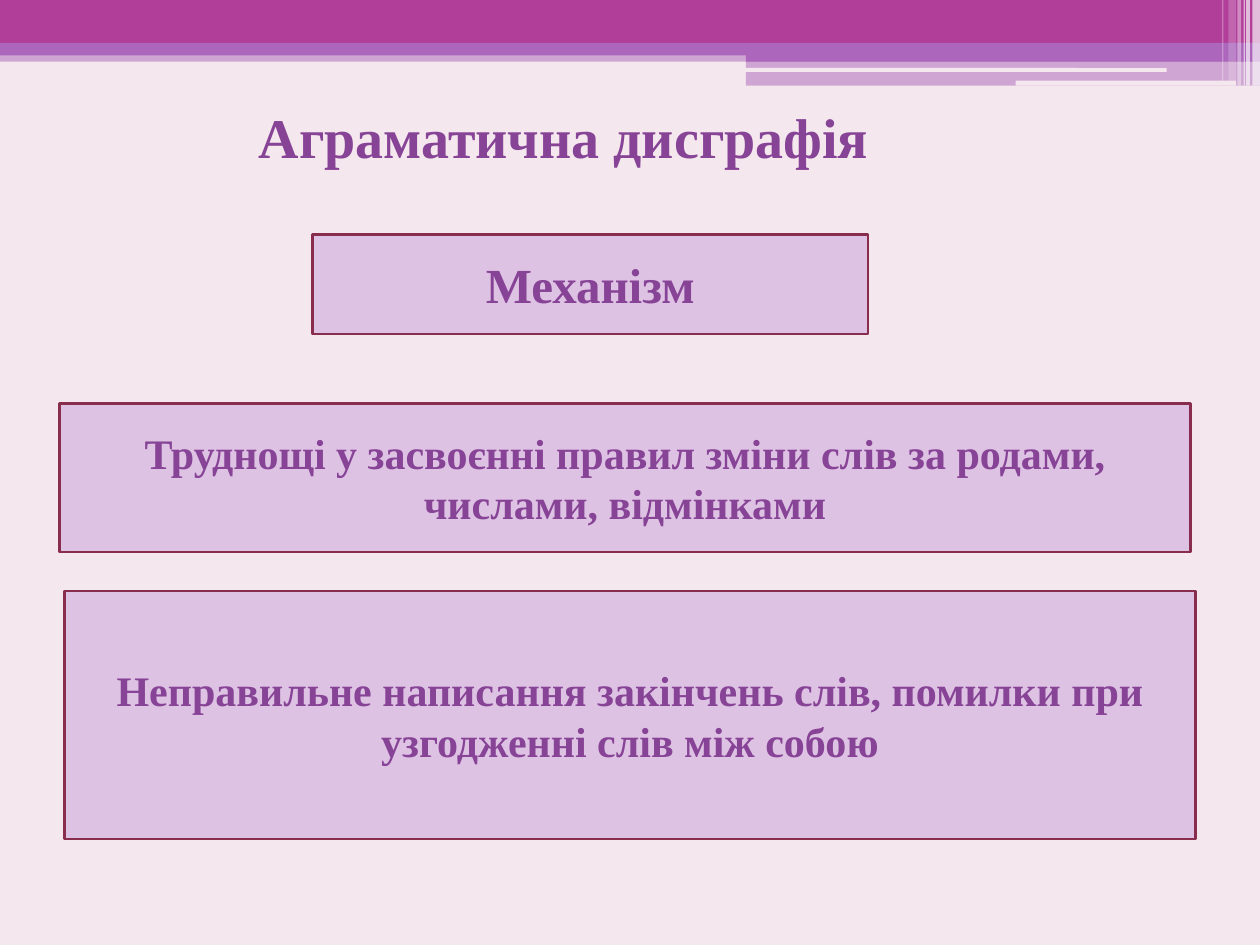
import pptx
import pptx.util
import pptx.dml.color
import pptx.enum.shapes
import pptx.enum.text
import pptx.oxml.ns
from lxml import etree

Inches = pptx.util.Inches
RGBColor = pptx.dml.color.RGBColor
Kind = pptx.enum.shapes.MSO_SHAPE
Anchor = pptx.enum.text.MSO_ANCHOR

PAPER = RGBColor(0xF4, 0xE7, 0xED)
PINK = RGBColor(0xB1, 0x3F, 0x9A)
VIOLET = RGBColor(0xAC, 0x66, 0xBB)
WHITE = RGBColor(0xFF, 0xFF, 0xFF)
LILAC = RGBColor(0xDE, 0xC2, 0xE4)
WINE = RGBColor(0x88, 0x2D, 0x4D)
INK = RGBColor(0x87, 0x43, 0x96)


class Page:
    font = "Times New Roman"

    def __init__(self, deck):
        self.slide = deck.slides.add_slide(deck.slide_layouts[5])
        fill = self.slide.background.fill
        fill.solid()
        fill.fore_color.rgb = PAPER

    def label(self, shape, text, size, anchor):
        frame = shape.text_frame
        frame.text = text
        frame.word_wrap = True
        frame.vertical_anchor = anchor
        para = frame.paragraphs[0]
        para.alignment = pptx.enum.text.PP_ALIGN.CENTER
        font = para.runs[0].font
        font.name, font.size, font.bold = self.font, pptx.util.Pt(size), True
        font.color.rgb = INK

    def title(self, text, x, y, w, h):
        shape = self.slide.shapes.title
        shape.left, shape.top = Inches(x), Inches(y)
        shape.width, shape.height = Inches(w), Inches(h)
        self.label(shape, text, 32, Anchor.TOP)
        shape.text_frame.auto_size = pptx.enum.text.MSO_AUTO_SIZE.SHAPE_TO_FIT_TEXT

    def band(self, x, y, w, h, color, alpha=100, kind=Kind.RECTANGLE):
        shape = self.slide.shapes.add_shape(
            kind, Inches(x), Inches(y), Inches(w), Inches(h))
        shape.shadow.inherit = False
        shape.fill.solid()
        shape.fill.fore_color.rgb = color
        shape.line.fill.background()
        if alpha < 100:
            tint = shape.element.spPr.find(".//" + pptx.oxml.ns.qn("a:srgbClr"))
            etree.SubElement(tint, pptx.oxml.ns.qn("a:alpha"), val=str(alpha * 1000))
        return shape

    def box(self, text, size, x, y, w, h):
        shape = self.band(x, y, w, h, LILAC)
        shape.line.color.rgb = WINE
        shape.line.width = pptx.util.Pt(1.5)
        self.label(shape, text, size, Anchor.MIDDLE)


def main():
    deck = pptx.Presentation()
    deck.slide_width, deck.slide_height = Inches(10), Inches(7.5)
    page = Page(deck)

    # Header bands
    page.band(0, 0.4, 10, 0.09, VIOLET, 50)
    page.band(0, 0, 10, 0.34, PINK)
    page.band(0, 0.34, 10, 0.1, VIOLET)
    page.band(5.92, 0.39, 4.08, 0.1, VIOLET)
    page.band(5.92, 0.48, 4.08, 0.2, VIOLET, 50)
    for x, y, w, h in ((5.91, 0.54, 3.35, 0.03), (8.06, 0.64, 1.75, 0.04)):
        page.band(x, y, w, h, PAPER, kind=Kind.ROUNDED_RECTANGLE)

    # Pale stripes at the right edge
    for x, w, h, alpha in (
        (9.94, 0.06, 0.68, 65), (9.89, 0.03, 0.68, 65), (9.87, 0.01, 0.68, 60),
        (9.82, 0.03, 0.68, 40), (9.75, 0.06, 0.64, 20), (9.7, 0.01, 0.64, 30),
    ):
        page.band(x, 0, w, h, WHITE, alpha)

    # Title and text boxes
    page.title("Аграматична дисграфія ", 1.54, 0.76, 5.98, 0.64)
    page.box("Механізм", 28, 2.48, 1.86, 4.41, 0.79)
    page.box("Труднощі у засвоєнні правил зміни слів за родами, "
             "числами, відмінками", 24, 0.47, 3.2, 8.98, 1.18)
    page.box("Неправильне написання закінчень слів, помилки при "
             "узгодженні слів між собою", 24, 0.51, 4.69, 8.98, 1.97)

    deck.save("out.pptx")


if __name__ == "__main__":
    main()
